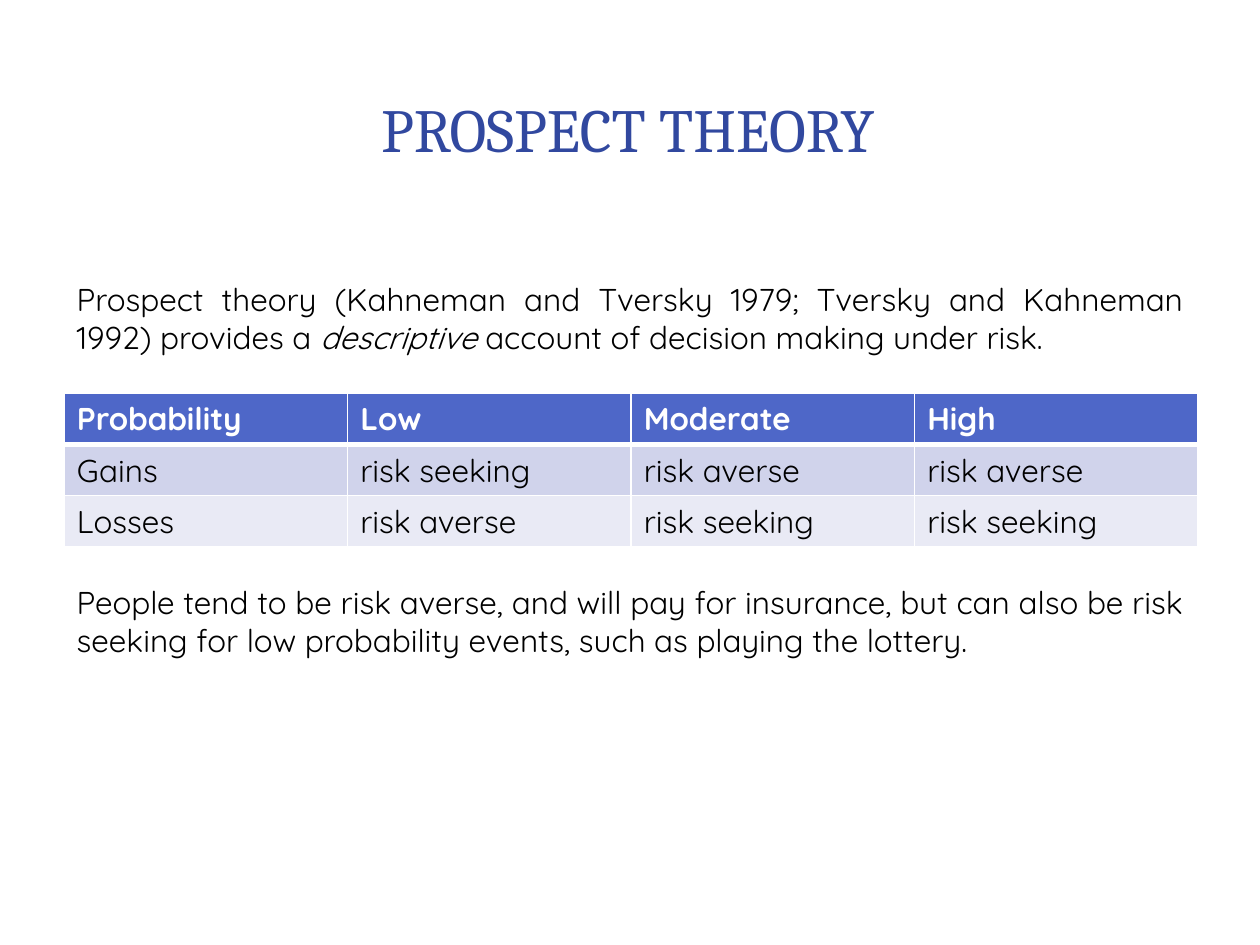
from lxml import etree
from pptx import Presentation
from pptx.dml.color import RGBColor
from pptx.enum.shapes import MSO_SHAPE
from pptx.enum.text import MSO_ANCHOR, PP_ALIGN
from pptx.oxml.ns import qn
from pptx.util import Pt

COLORS = {
    "panel": "FFFFFF",
    "border": "FFFFFF",
    "title": "31489F",
    "text": "000000",
    "header_text": "FFFFFF",
    "header": "4E67C8",
    "gains": "D0D3EB",
    "losses": "E9EAF5",
}


def style_run(run, size, font, color, bold=False, italic=False):
    run.font.size = Pt(size)
    run.font.name = font
    run.font.color.rgb = RGBColor.from_string(COLORS[color])
    run.font.bold = bold
    run.font.italic = italic


def add_text(slide, left, top, width, height, align):
    text_frame = slide.shapes.add_textbox(
        Pt(left), Pt(top), Pt(width), Pt(height)).text_frame
    text_frame.word_wrap = True
    text_frame.paragraphs[0].alignment = align
    return text_frame


presentation = Presentation()
presentation.slide_width = Pt(720)
presentation.slide_height = Pt(540)
slide = presentation.slides.add_slide(presentation.slide_layouts[6])

# White panels behind the slide and its title
panels = [
    (MSO_SHAPE.ROUNDED_RECTANGLE, 7.2, 7.92, 705.6, 524.88),
    (MSO_SHAPE.RECTANGLE, 21.6, 21.6, 676.8, 104.4),
    (MSO_SHAPE.RECTANGLE, 29.52, 29.52, 660.24, 87.84),
]
for kind, left, top, width, height in panels:
    panel = slide.shapes.add_shape(kind, Pt(left), Pt(top), Pt(width), Pt(height))
    panel.shadow.inherit = False
    panel.fill.solid()
    panel.fill.fore_color.rgb = RGBColor.from_string(COLORS["panel"])
    panel.line.fill.background()
    if kind == MSO_SHAPE.ROUNDED_RECTANGLE:
        panel.adjustments[0] = 0.02

# Title
title_frame = add_text(slide, 33.84, 32.4, 650.16, 82.08, PP_ALIGN.CENTER)
title_frame.vertical_anchor = MSO_ANCHOR.MIDDLE
title_run = title_frame.paragraphs[0].add_run()
title_run.text = "PROSPECT THEORY"
style_run(title_run, 35, "Cambria", "title")

# Risk attitude table
rows = [
    ("header", ["Probability", "Low", "Moderate", "High"]),
    ("gains", ["Gains", "risk seeking", "risk averse", "risk averse"]),
    ("losses", ["Losses", "risk averse", "risk seeking", "risk seeking"]),
]
table = slide.shapes.add_table(
    3, 4, Pt(36.72), Pt(224.64), Pt(648), Pt(87.6)).table
for row_index, (fill, labels) in enumerate(rows):
    is_header = fill == "header"
    # A thick rule separates the header from the rows below
    border_widths = {
        "a:lnL": 1,
        "a:lnR": 1,
        "a:lnT": 3 if row_index == 1 else 1,
        "a:lnB": 3 if is_header else 1,
    }
    for column_index, label in enumerate(labels):
        cell = table.cell(row_index, column_index)
        properties = cell._tc.get_or_add_tcPr()
        for tag, width in border_widths.items():
            border = etree.SubElement(properties, qn(tag), w=str(Pt(width)))
            border_fill = etree.SubElement(border, qn("a:solidFill"))
            etree.SubElement(border_fill, qn("a:srgbClr"), val=COLORS["border"])
        cell.fill.solid()
        cell.fill.fore_color.rgb = RGBColor.from_string(COLORS[fill])
        cell.text_frame.text = label
        style_run(cell.text_frame.paragraphs[0].runs[0], 18, "Quicksand",
                  "header_text" if is_header else "text", bold=is_header)
        # The fill has to follow the borders in the cell properties
        properties.append(properties.find(qn("a:solidFill")))

# Paragraphs above and below the table: (top, [(text, italic)])
body_texts = [
    (156.5, [
        ("Prospect theory (Kahneman and Tversky 1979; Tversky and Kahneman 1992) provides a ", False),
        ("descriptive", True),
        (" account of decision making under risk.", False),
    ]),
    (329.5, [
        ("People tend to be risk averse, and will pay for insurance, but can also be risk "
         "seeking for low probability events, such as playing the lottery.", False),
    ]),
]
for top, parts in body_texts:
    body_frame = add_text(slide, 36.72, top, 646.56, 52, PP_ALIGN.JUSTIFY)
    for text, italic in parts:
        run = body_frame.paragraphs[0].add_run()
        run.text = text
        style_run(run, 18, "Quicksand", "text", italic=italic)

presentation.save("out.pptx")
